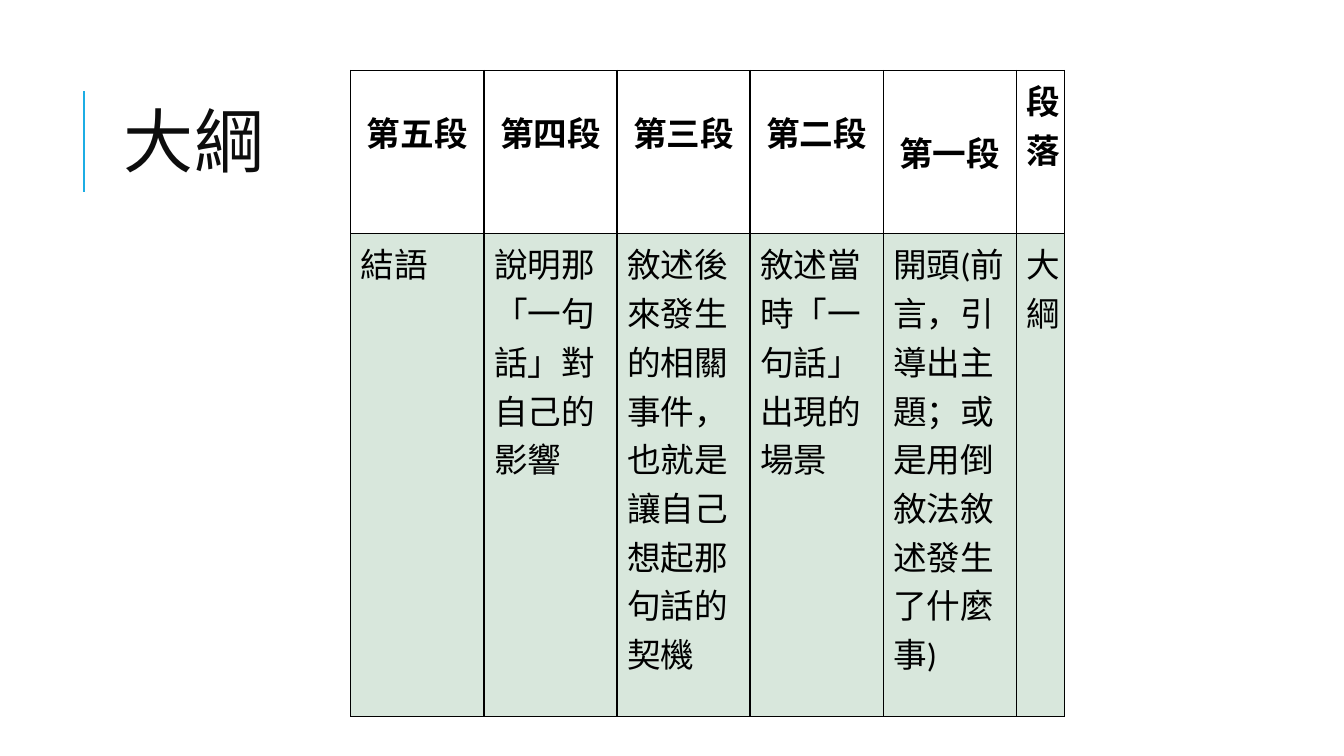
from dataclasses import dataclass

from lxml import etree
from pptx import Presentation
from pptx import util as u
from pptx.dml.color import RGBColor
from pptx.enum import shapes, text
from pptx.oxml.ns import qn

EMU_PER_PX = 9144


@dataclass(frozen=True)
class Theme:
    ink: str = "000000"
    title_ink: str = "0D0D0D"
    accent: str = "1CADE4"
    body_fill: str = "3E8853"
    body_opacity: int = 20
    title_font: str = "Cabin"
    table_font: str = "Calibri"
    title_size: int = 50
    table_size: int = 24


THEME = Theme()

# (heading, outline), in column order; the last column holds the row labels
SECTIONS = [
    ("第五段", "結語"),
    ("第四段", "說明那「一句話」對自己的影響"),
    ("第三段", "敘述後來發生的相關事件，也就是讓自己想起那句話的契機"),
    ("第二段", "敘述當時「一句話」出現的場景"),
    ("第一段", "開頭(前言，引導出主題；或是用倒敘法敘述發生了什麼事)"),
    ("段落", "大綱"),
]
LABEL_COLUMN = len(SECTIONS) - 1
RAISED_HEADINGS = 4
COLUMN_WIDTH, LABEL_WIDTH = 132, 48
HEADING_HEIGHT, OUTLINE_HEIGHT = 162, 479


def px(value):
    return u.Emu(value * EMU_PER_PX)


def style_run(run, font, size, color, bold=False):
    run.font.name = font
    run.font.size = u.Pt(size)
    run.font.bold = bold
    run.font.color.rgb = RGBColor.from_string(color)


def add_title(slide, wording):
    title = slide.shapes.title
    title.left, title.top, title.width, title.height = map(px, (112, 64, 1063, 164))
    frame = title.text_frame
    frame.text = wording
    frame.auto_size = text.MSO_AUTO_SIZE.NONE
    frame.vertical_anchor = text.MSO_ANCHOR.MIDDLE
    paragraph = frame.paragraphs[0]
    paragraph.alignment = text.PP_ALIGN.LEFT
    paragraph.line_spacing = 0.8
    run = paragraph.runs[0]
    style_run(run, THEME.title_font, THEME.title_size, THEME.title_ink)
    run.font._element.set("spc", "100")


def add_accent_line(slide):
    line = slide.shapes.add_connector(
        shapes.MSO_CONNECTOR.STRAIGHT, px(83), px(190), px(83), px(90))
    line.line.color.rgb = RGBColor.from_string(THEME.accent)
    line.line.width = u.Pt(1.5)
    etree.SubElement(line._element.spPr, qn("a:effectLst"))


def add_borders(cell):
    properties = cell._tc.get_or_add_tcPr()
    for index, side in enumerate(("lnL", "lnR", "lnT", "lnB")):
        border = etree.Element(qn(f"a:{side}"), w=str(u.Pt(1)))
        fill = etree.SubElement(border, qn("a:solidFill"))
        etree.SubElement(fill, qn("a:srgbClr"), val=THEME.ink)
        properties.insert(index, border)


def tint(cell):
    cell.fill.solid()
    cell.fill.fore_color.rgb = RGBColor.from_string(THEME.body_fill)
    color = cell._tc.tcPr.find(f".//{qn('a:srgbClr')}")
    etree.SubElement(color, qn("a:alpha"), val=str(THEME.body_opacity * 1000))


def fill_cell(cell, wording, heading, centred):
    """Write one cell in vertical East Asian text direction."""
    cell.text = wording
    paragraph = cell.text_frame.paragraphs[0]
    paragraph.alignment = text.PP_ALIGN.CENTER if centred else text.PP_ALIGN.LEFT
    style_run(paragraph.runs[0], THEME.table_font, THEME.table_size, THEME.ink, heading)
    if heading:
        cell.fill.background()
    else:
        tint(cell)
    add_borders(cell)
    cell._tc.tcPr.set("vert", "eaVert")


def add_outline_table(slide):
    widths = [COLUMN_WIDTH] * LABEL_COLUMN + [LABEL_WIDTH]
    frame = slide.shapes.add_table(
        2, len(SECTIONS), px(348), px(70),
        px(sum(widths)), px(HEADING_HEIGHT + OUTLINE_HEIGHT))
    table = frame.table
    table.first_row = table.horz_banding = False
    table.rows[0].height = px(HEADING_HEIGHT)
    table.rows[1].height = px(OUTLINE_HEIGHT)
    for index, (heading, outline) in enumerate(SECTIONS):
        table.columns[index].width = px(widths[index])
        is_label = index == LABEL_COLUMN
        top, body = table.cell(0, index), table.cell(1, index)
        fill_cell(top, heading, heading=True, centred=True)
        fill_cell(body, outline, heading=False, centred=is_label)
        if not is_label:
            top.vertical_anchor = text.MSO_ANCHOR.MIDDLE
        if index < RAISED_HEADINGS:
            top.margin_bottom = px(45)


def main():
    presentation = Presentation()
    presentation.slide_width, presentation.slide_height = px(1333), px(750)
    slide = presentation.slides.add_slide(presentation.slide_layouts[5])
    add_accent_line(slide)
    add_title(slide, "大綱")
    add_outline_table(slide)
    presentation.save("out.pptx")


if __name__ == "__main__":
    main()
